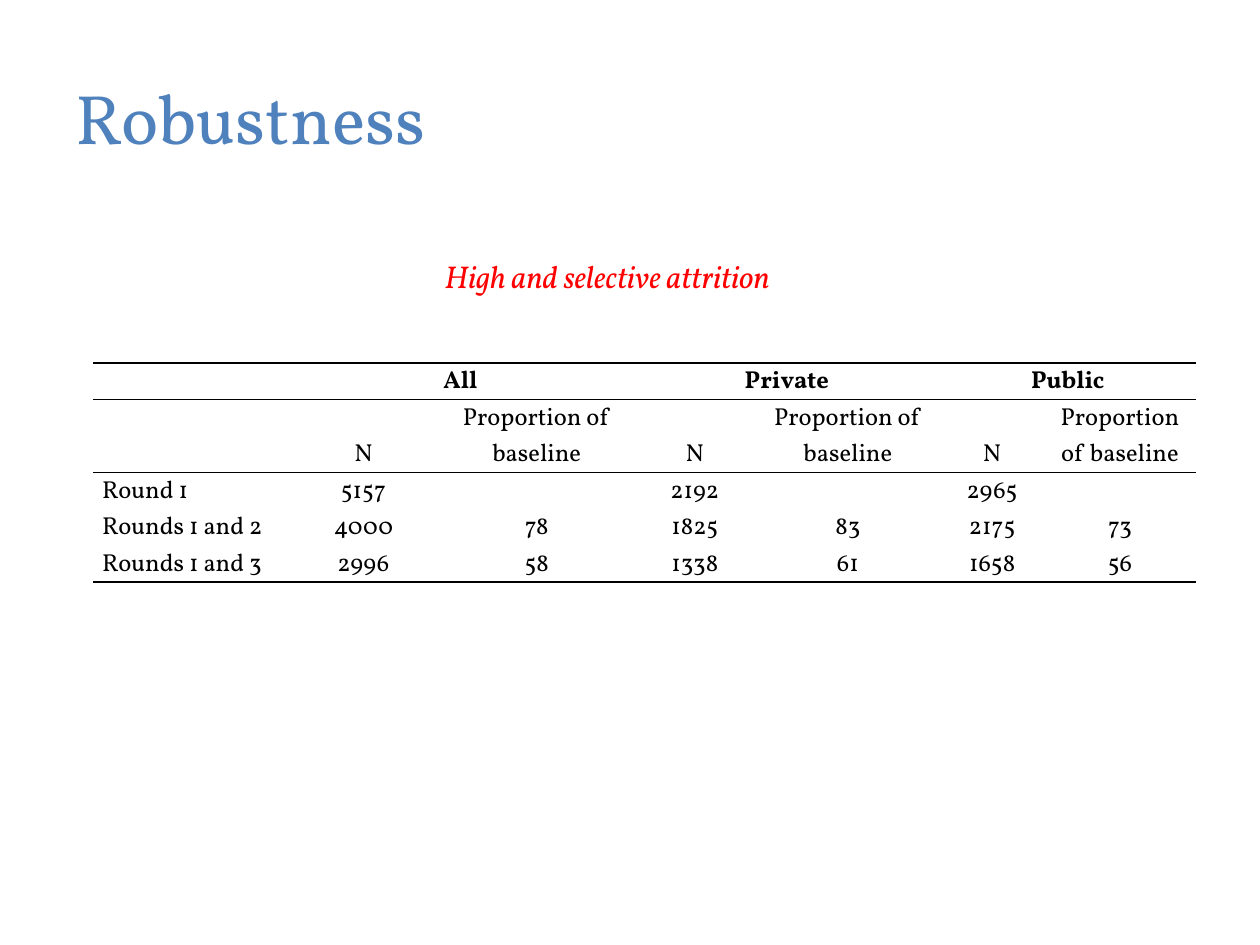
from lxml import etree
from pptx import Presentation
from pptx.dml.color import RGBColor
from pptx.enum.text import MSO_ANCHOR, PP_ALIGN
from pptx.oxml.ns import qn
from pptx.util import Inches, Pt

FONT = "Vollkorn"
BLUE = RGBColor(0x4F, 0x81, 0xBD)
RED = RGBColor(0xFF, 0x00, 0x00)
BLACK = RGBColor(0x00, 0x00, 0x00)
LEFT, CENTER = PP_ALIGN.LEFT, PP_ALIGN.CENTER
MIDDLE, BOTTOM = MSO_ANCHOR.MIDDLE, MSO_ANCHOR.BOTTOM

COLUMN_WIDTHS = [1.54, 1.21, 1.54, 0.97, 1.46, 0.83, 1.2]
LINE_HEIGHT = 0.29
ROW_LINES = [1, 2, 1, 1, 1]
ROWS = [
    ["", "All", "", "Private", "", "Public", ""],
    [""] + ["N", "Proportion of baseline"] * 3,
    ["Round 1", "5157", "", "2192", "", "2965", ""],
    ["Rounds 1 and 2", "4000", "78", "1825", "83", "2175", "73"],
    ["Rounds 1 and 3", "2996", "58", "1338", "61", "1658", "56"],
]
RULES_ABOVE = {0, 1, 2}
RULES_BELOW = {0, 1, 4}


def write_text(frame, text, size, color, bold=False, italic=False, align=LEFT):
    para = frame.paragraphs[0]
    para.alignment = align
    if text:
        span = para.add_run()
        span.text = text
        span.font.name = FONT
        span.font.size = Pt(size)
        span.font.bold = bold
        span.font.italic = italic
        span.font.color.rgb = color
    else:
        etree.SubElement(para._p, qn("a:endParaRPr"), sz=str(size * 100))
    return para


def set_border(cell, side, visible):
    """Draw or clear one cell edge; side is L, R, T or B, called in that order."""
    properties = cell._tc.get_or_add_tcPr()
    line = etree.SubElement(properties, qn(f"a:ln{side}"), w=str(Pt(1)))
    if visible:
        fill = etree.SubElement(line, qn("a:solidFill"))
        etree.SubElement(fill, qn("a:srgbClr"), val=str(BLACK))
    else:
        etree.SubElement(line, qn("a:noFill"))


deck = Presentation()
deck.slide_width = Inches(10)
deck.slide_height = Inches(7.5)
page = deck.slides.add_slide(deck.slide_layouts[6])

title = page.shapes.add_textbox(Inches(0.5), Inches(0.3), Inches(9), Inches(1.25))
title.text_frame.word_wrap = True
title.text_frame.vertical_anchor = MIDDLE
write_text(title.text_frame, "Robustness", 40, BLUE)

table = page.shapes.add_table(
    len(ROWS), len(COLUMN_WIDTHS), Inches(0.74), Inches(2.88),
    Inches(sum(COLUMN_WIDTHS)), Inches(LINE_HEIGHT * sum(ROW_LINES)),
).table
table.first_row = False
table.horz_banding = False
for column, width in zip(table.columns, COLUMN_WIDTHS):
    column.width = Inches(width)
for row, lines in zip(table.rows, ROW_LINES):
    row.height = Inches(LINE_HEIGHT * lines)

for row_index, texts in enumerate(ROWS):
    for column_index, text in enumerate(texts):
        cell = table.cell(row_index, column_index)
        cell.margin_left = cell.margin_right = Inches(0.07)
        cell.margin_top = cell.margin_bottom = 0
        cell.vertical_anchor = BOTTOM
        para = write_text(
            cell.text_frame, text, 14, BLACK, bold=row_index == 0,
            align=CENTER if column_index else LEFT,
        )
        para.line_spacing = 1.07
        set_border(cell, "L", False)
        set_border(cell, "R", False)
        set_border(cell, "T", row_index in RULES_ABOVE)
        set_border(cell, "B", row_index in RULES_BELOW)
        cell.fill.background()

for first in (1, 3, 5):
    table.cell(0, first).merge(table.cell(0, first + 1))

caption = page.shapes.add_textbox(Inches(3.43), Inches(1.99), Inches(2.96), Inches(0.4))
caption.text_frame.word_wrap = False
write_text(caption.text_frame, "High and selective attrition", 18, RED, italic=True)

deck.save("out.pptx")
